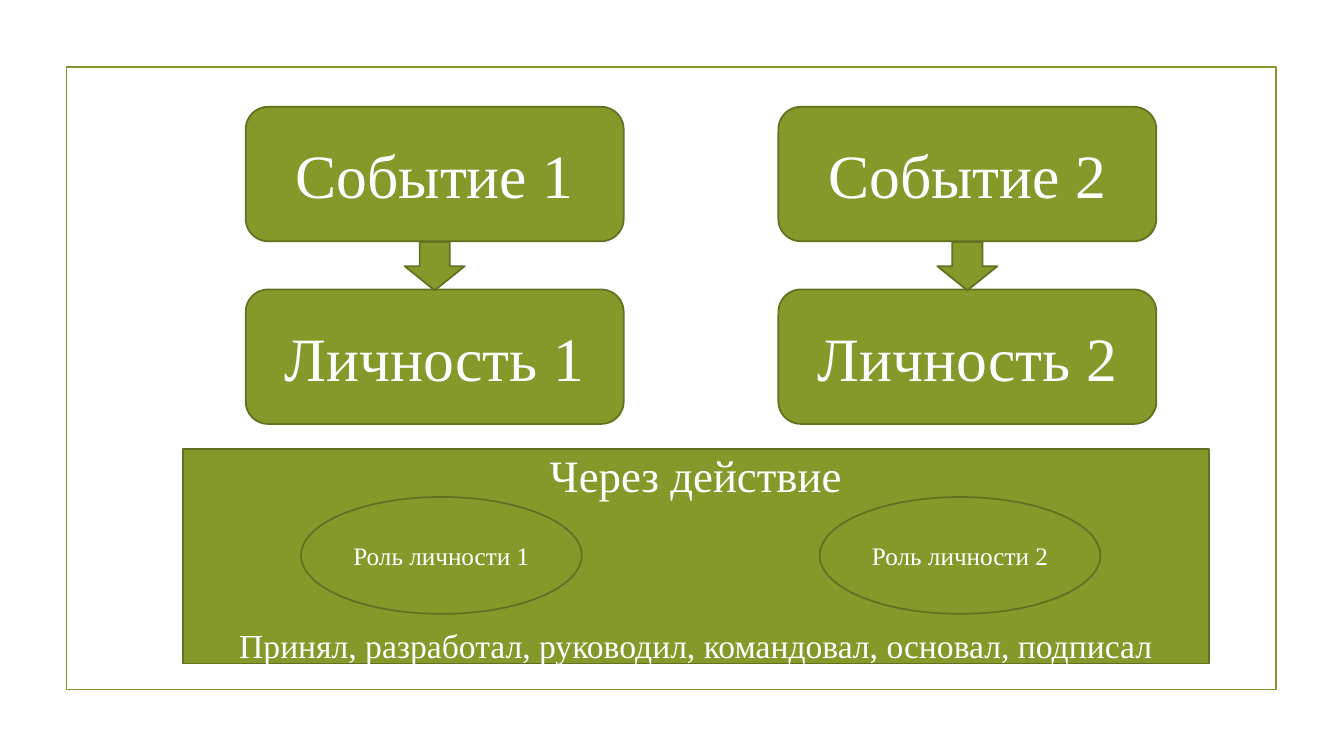
import pptx
import pptx.util
import pptx.dml.color
import pptx.enum.shapes
import pptx.enum.text

Pt = pptx.util.Pt
KIND = pptx.enum.shapes.MSO_SHAPE
GREEN, DARK, WHITE = "83992A", "61711F", "FFFFFF"


def color(target, code):
    target.rgb = pptx.dml.color.RGBColor.from_string(code)


def draw(slide, kind, box, fill=GREEN, line=DARK):
    """Add a shape with a fill (or none) and a thin outline."""
    shape = slide.shapes.add_shape(kind, *map(Pt, box))
    shape.shadow.inherit = False
    if fill:
        shape.fill.solid()
        color(shape.fill.fore_color, fill)
    else:
        shape.fill.background()
    color(shape.line.color, line)
    shape.line.width = Pt(1.25)
    return shape


def write(shape, *lines):
    """Write centred lines, each given as text, size and space before."""
    frame = shape.text_frame
    frame.word_wrap = True
    frame.vertical_anchor = pptx.enum.text.MSO_ANCHOR.MIDDLE
    for i, (text, size, gap) in enumerate(lines):
        para = frame.add_paragraph() if i else frame.paragraphs[0]
        para.alignment = pptx.enum.text.PP_ALIGN.CENTER
        if gap:
            para.space_before = Pt(gap)
        run = para.add_run()
        run.text = text
        for name, value in {"name": "Times New Roman", "size": Pt(size)}.items():
            setattr(run.font, name, value)
        color(run.font.color, WHITE)


def main():
    deck = pptx.Presentation()
    deck.slide_width, deck.slide_height = Pt(960), Pt(540)
    slide = deck.slides.add_slide(deck.slide_layouts[6])

    # Frame and lower panel
    draw(slide, KIND.RECTANGLE, (47.5, 48, 864, 444.5), None, GREEN)
    panel = draw(slide, KIND.RECTANGLE, (130.5, 320.5, 733, 153.5))
    write(panel, ("Через действие", 32, 0),
          ("Принял, разработал, руководил, командовал, основал, подписал", 24, 88))

    # One column per event: event, person, role and arrow
    for i in range(2):
        left = 175.5 + 380.5 * i
        for word, top in (("Событие", 76.3), ("Личность", 206.8)):
            card = draw(slide, KIND.ROUNDED_RECTANGLE, (left, top, 270, 96))
            write(card, (f"{word} {i + 1}", 44, 0))
        role = draw(slide, KIND.OVAL, (215 + 370.5 * i, 355, 200.5, 83.5))
        write(role, (f"Роль личности {i + 1}", 18, 0))
        draw(slide, KIND.DOWN_ARROW, (left + 113.5, 172.8, 43, 34.6))

    deck.save("out.pptx")


if __name__ == "__main__":
    main()
